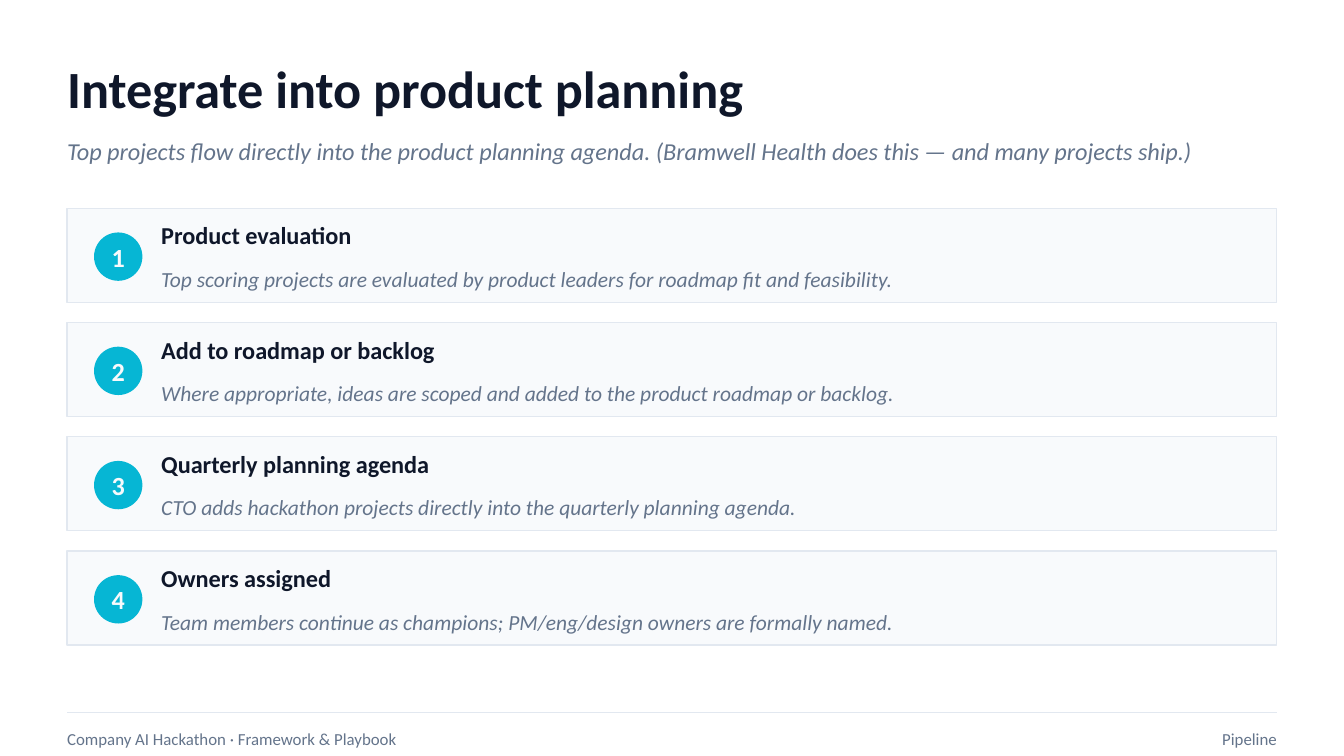
from lxml import etree
from pptx import Presentation
from pptx.dml.color import RGBColor
from pptx.enum.shapes import MSO_CONNECTOR, MSO_SHAPE
from pptx.enum.text import MSO_ANCHOR, PP_ALIGN
from pptx.oxml.ns import qn
from pptx.util import Inches, Pt

TITLE = "Integrate into product planning"
INTRO = ("Top projects flow directly into the product planning agenda. "
         "(Bramwell Health does this — and many projects ship.)")
STEPS = [
    ("Product evaluation",
     "Top scoring projects are evaluated by product leaders for roadmap fit and feasibility."),
    ("Add to roadmap or backlog",
     "Where appropriate, ideas are scoped and added to the product roadmap or backlog."),
    ("Quarterly planning agenda",
     "CTO adds hackathon projects directly into the quarterly planning agenda."),
    ("Owners assigned",
     "Team members continue as champions; PM/eng/design owners are formally named."),
]
FOOTER = "Company AI Hackathon · Framework & Playbook"
SECTION = "Pipeline"

INK = RGBColor(0x0F, 0x17, 0x2A)
MUTED = RGBColor(0x64, 0x74, 0x8B)
PALE = RGBColor(0xF8, 0xFA, 0xFC)
BORDER = RGBColor(0xE2, 0xE8, 0xF0)
CYAN = RGBColor(0x06, 0xB6, 0xD4)

FONT = "Calibri"
LEFT, CENTER, RIGHT = PP_ALIGN.LEFT, PP_ALIGN.CENTER, PP_ALIGN.RIGHT
MIDDLE = MSO_ANCHOR.MIDDLE
RECT, OVAL = MSO_SHAPE.RECTANGLE, MSO_SHAPE.OVAL
STRAIGHT = MSO_CONNECTOR.STRAIGHT

PAGE = 10
MARGIN, WIDTH = 0.5, 9
TOP, CARD, GAP = 1.55, 0.7, 0.15
BADGE = 0.36


def write(shape, text, size, color, bold=False, italic=False, align=LEFT):
    frame = shape.text_frame
    frame.word_wrap = True
    frame.vertical_anchor = MIDDLE
    frame.margin_left = frame.margin_right = 0
    frame.margin_top = frame.margin_bottom = 0
    para = frame.paragraphs[0]
    para.text = text
    para.alignment = align
    font = para.font
    font.name, font.size = FONT, Pt(size)
    font.bold, font.italic = bold, italic
    font.color.rgb = color


def add_text(slide, box, text, size, color, **style):
    shape = slide.shapes.add_textbox(*map(Inches, box))
    write(shape, text, size, color, **style)


def add_shape(slide, kind, box, fill, line=None):
    shape = slide.shapes.add_shape(kind, *map(Inches, box))
    shape.shadow.inherit = False
    shape.fill.solid()
    shape.fill.fore_color.rgb = fill
    if line is None:
        shape.line.fill.background()
    else:
        shape.line.color.rgb = line
        shape.line.width = Pt(0.75)
    return shape


def add_step(slide, index, name, detail):
    top = TOP + index * (CARD + GAP)
    add_shape(slide, RECT, (MARGIN, top, WIDTH, CARD), PALE, BORDER)
    badge = add_shape(slide, OVAL, (0.7, top + 0.18, BADGE, BADGE), CYAN)
    write(badge, str(index + 1), 14, PALE, bold=True, align=CENTER)
    add_text(slide, (1.2, top + 0.05, 2.7, 0.3), name, 13, INK, bold=True)
    add_text(slide, (1.2, top + 0.35, 8.1, 0.35), detail, 11.5, MUTED, italic=True)


def add_rule(slide, top):
    ends = map(Inches, (MARGIN, top, MARGIN + WIDTH, top))
    rule = slide.shapes.add_connector(STRAIGHT, *ends)
    rule.line.color.rgb = BORDER
    rule.line.width = Pt(0.75)
    etree.SubElement(rule._element.spPr, qn("a:effectLst"))


def main():
    deck = Presentation()
    deck.slide_width = Inches(PAGE)
    deck.slide_height = Inches(PAGE * 9 / 16)
    slide = deck.slides.add_slide(deck.slide_layouts[6])
    add_text(slide, (MARGIN, 0.35, WIDTH, 0.6), TITLE, 28, INK, bold=True)
    add_text(slide, (MARGIN, 0.95, WIDTH, 0.35), INTRO, 13, MUTED, italic=True)
    for index, (name, detail) in enumerate(STEPS):
        add_step(slide, index, name, detail)
    add_rule(slide, 5.3)
    add_text(slide, (MARGIN, 5.35, 5.5, 0.3), FOOTER, 9, MUTED)
    add_text(slide, (6, 5.35, 3.5, 0.3), SECTION, 9, MUTED, align=RIGHT)
    deck.save("out.pptx")


if __name__ == "__main__":
    main()
